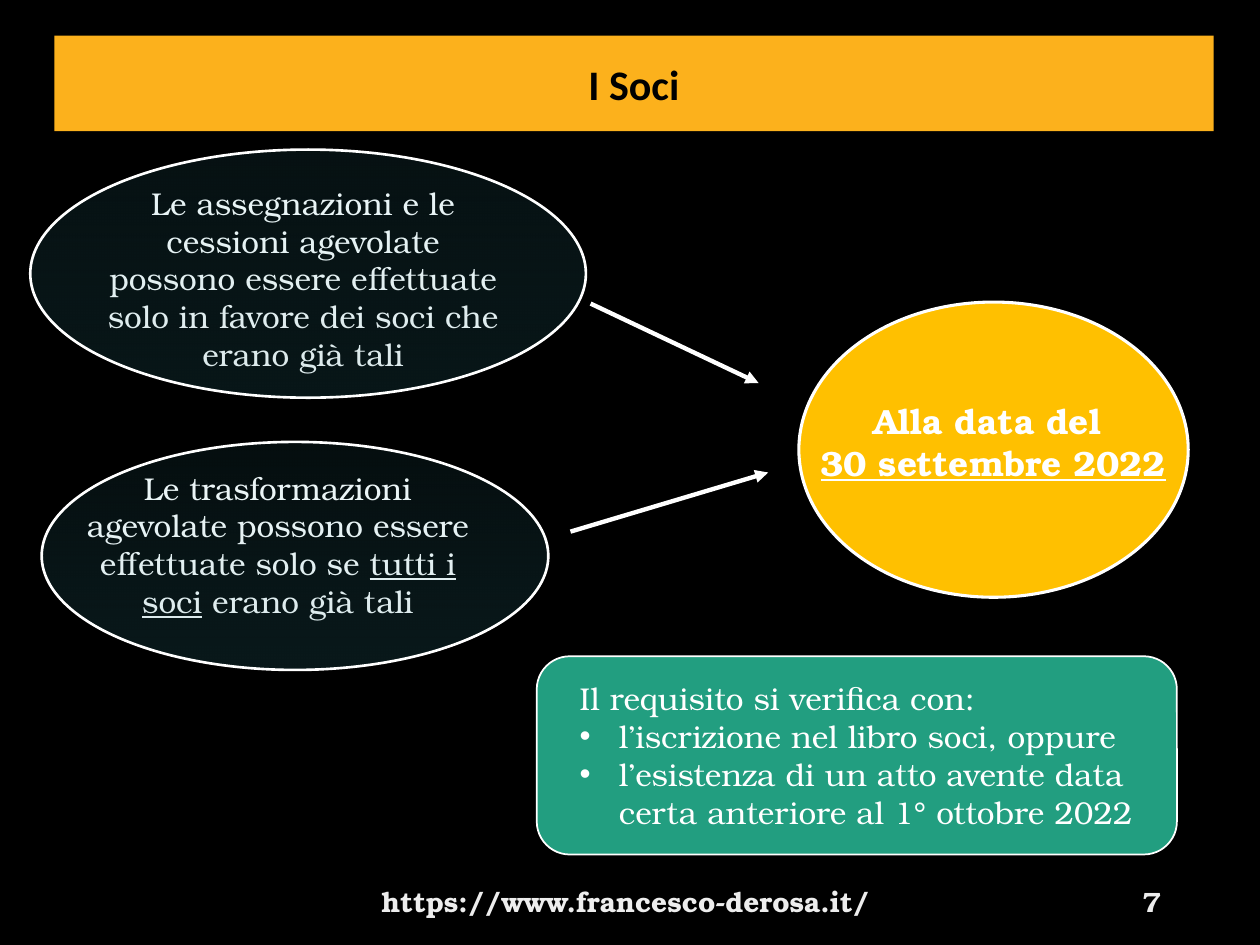
from dataclasses import dataclass

from lxml import etree
from pptx import Presentation
from pptx.dml.color import RGBColor
from pptx.enum.shapes import MSO_CONNECTOR, MSO_SHAPE
from pptx.enum.text import MSO_ANCHOR, MSO_AUTO_SIZE, PP_ALIGN
from pptx.oxml.ns import qn
from pptx.util import Pt

OVAL, ROUNDED = MSO_SHAPE.OVAL, MSO_SHAPE.ROUNDED_RECTANGLE
STRAIGHT = MSO_CONNECTOR.STRAIGHT
TOP, MIDDLE = MSO_ANCHOR.TOP, MSO_ANCHOR.MIDDLE
LEFT, CENTER, RIGHT = PP_ALIGN.LEFT, PP_ALIGN.CENTER, PP_ALIGN.RIGHT


@dataclass(frozen=True)
class Theme:
    heading_font: str = "Calibri"
    text_font: str = "TeX Gyre Bonum"
    title_size: float = 24
    date_size: float = 20
    text_size: float = 18
    footer_size: float = 16
    black: str = "000000"
    white: str = "FFFFFF"
    footer: str = "EDEDED"
    banner: str = "FCB11C"
    gold: str = "FFC000"
    green: str = "229E80"
    glass_top: str = "41AEBD"
    glass_bottom: str = "2E7C87"


def color(value):
    return RGBColor.from_string(value)


class SlideBuilder:
    def __init__(self, page, theme):
        self.page, self.theme = page, theme
        page.background.fill.solid()
        page.background.fill.fore_color.rgb = color(theme.black)

    def place(self, shape, box):
        shape.left, shape.top, shape.width, shape.height = map(Pt, box)

    def style(self, para, size, tint, align=CENTER, bold=False, font=None):
        para.alignment = align
        para.space_before = Pt(0)
        para.font.name = font or self.theme.text_font
        para.font.size = Pt(size)
        para.font.bold = bold
        para.font.color.rgb = color(tint)

    def title(self, text, box):
        theme, shape = self.theme, self.page.shapes.title
        self.place(shape, box)
        shape.fill.solid()
        shape.fill.fore_color.rgb = color(theme.banner)
        shape.text_frame.text = text
        shape.text_frame.vertical_anchor = MIDDLE
        self.style(shape.text_frame.paragraphs[0], theme.title_size,
                   theme.black, bold=True, font=theme.heading_font)

    def text(self, paragraphs, box, size, tint, align=CENTER, bold=False, anchor=TOP):
        """Each paragraph is a list of (text, underlined) spans."""
        frame = self.page.shapes.add_textbox(*map(Pt, box)).text_frame
        frame.word_wrap = True
        frame.vertical_anchor = anchor
        for index, spans in enumerate(paragraphs):
            para = frame.add_paragraph() if index else frame.paragraphs[0]
            self.style(para, size, tint, align, bold)
            for words, underlined in spans:
                span = para.add_run()
                span.text = words
                if underlined:
                    span.font.underline = True

    def shape(self, kind, box, fill, line_width):
        shape = self.page.shapes.add_shape(kind, *map(Pt, box))
        shape.shadow.inherit = False
        shape.line.color.rgb = color(self.theme.white)
        shape.line.width = Pt(line_width)
        if fill:
            shape.fill.solid()
            shape.fill.fore_color.rgb = color(fill)
        return shape

    def glass_oval(self, box, opacities):
        oval = self.shape(OVAL, box, None, 1.5)
        oval.fill.gradient()
        oval.fill.gradient_angle = 270
        tints = (self.theme.glass_top, self.theme.glass_bottom)
        for stop, place, tint in zip(oval.fill.gradient_stops, (0, 1), tints):
            stop.position = place
            stop.color.rgb = color(tint)
        values = oval.element.spPr.findall(".//" + qn("a:gs") + "/" + qn("a:srgbClr"))
        for value, percent in zip(values, opacities):
            etree.SubElement(value, qn("a:alpha"), val=str(percent * 1000))

    def arrow(self, start, end):
        line = self.page.shapes.add_connector(STRAIGHT, *map(Pt, start + end))
        line.line.color.rgb = color(self.theme.white)
        line.line.width = Pt(2.5)
        etree.SubElement(line.line._get_or_add_ln(), qn("a:tailEnd"), type="triangle")
        etree.SubElement(line.element.spPr, qn("a:effectLst"))

    def bullet_list(self, intro, items, box, panel):
        body = self.page.placeholders[1]
        self.place(body, box)
        panel.element.addnext(body.element)  # bring the list in front of its panel
        frame = body.text_frame
        frame.auto_size = MSO_AUTO_SIZE.NONE
        for index, words in enumerate([intro] + items):
            para = frame.add_paragraph() if index else frame.paragraphs[0]
            para.text = words
            props = para._p.get_or_add_pPr()
            indent = Pt(22.5) if index else 0
            props.set("marL", str(indent))
            props.set("indent", str(-indent))
            if index:
                etree.SubElement(props, qn("a:buFont"), typeface="Arial")
                etree.SubElement(props, qn("a:buChar"), char="•")
            else:
                etree.SubElement(props, qn("a:buNone"))
            self.style(para, self.theme.text_size, self.theme.white, LEFT)


def main():
    deck = Presentation()
    deck.slide_width, deck.slide_height = Pt(720), Pt(540)
    theme = Theme()
    slide = SlideBuilder(deck.slides.add_slide(deck.slide_layouts[1]), theme)

    slide.title("I Soci", (31, 20.3, 662.5, 54.7))

    # Conditions, each under a translucent oval
    assignments = [("Le assegnazioni e le cessioni agevolate possono essere "
                    "effettuate solo in favore dei soci che erano già tali", False)]
    conversions = [("Le trasformazioni agevolate possono essere effettuate solo se ", False),
                   ("tutti i soci", True), (" erano già tali", False)]
    for spans, text_box, oval_box, opacities in (
            (assignments, (54, 101.5, 238.3, 116.6), (17.3, 85.5, 317.5, 141.8), (10, 18)),
            (conversions, (42.5, 264.3, 232.6, 93.6), (23.8, 252.5, 289.5, 130.3), (8, 20))):
        slide.text([spans], text_box, theme.text_size, theme.white)
        slide.glass_oval(oval_box, opacities)

    # Arrows to the reference date
    slide.arrow((337.5, 173.5), (433.5, 218.9))
    slide.arrow((326, 303.8), (439, 270))
    slide.shape(OVAL, (456.5, 172.6, 222.5, 168.7), theme.gold, 1.75)
    slide.text([[("Alla data del ", False)], [("30 settembre 2022", True)]],
               (460.8, 224.6, 213.8, 55.4), theme.date_size, theme.white, bold=True)

    # Footer and page number
    for words, box, align in (
            ("https://www.francesco-derosa.it/", (201.6, 500.5, 311.8, 28.8), CENTER),
            ("7", (508.5, 500.5, 162, 28.8), RIGHT)):
        slide.text([[(words, False)]], box, theme.footer_size, theme.footer,
                   align, bold=True, anchor=MIDDLE)

    # Proof of the requirement
    panel = slide.shape(ROUNDED, (306.7, 375, 365.8, 113.3), theme.green, 1)
    slide.bullet_list("Il requisito si verifica con:",
                      ["l’iscrizione nel libro soci, oppure",
                       "l’esistenza di un atto avente data certa anteriore al 1° ottobre 2022"],
                      (324, 384.5, 331.2, 94.3), panel)

    deck.save("out.pptx")


if __name__ == "__main__":
    main()
